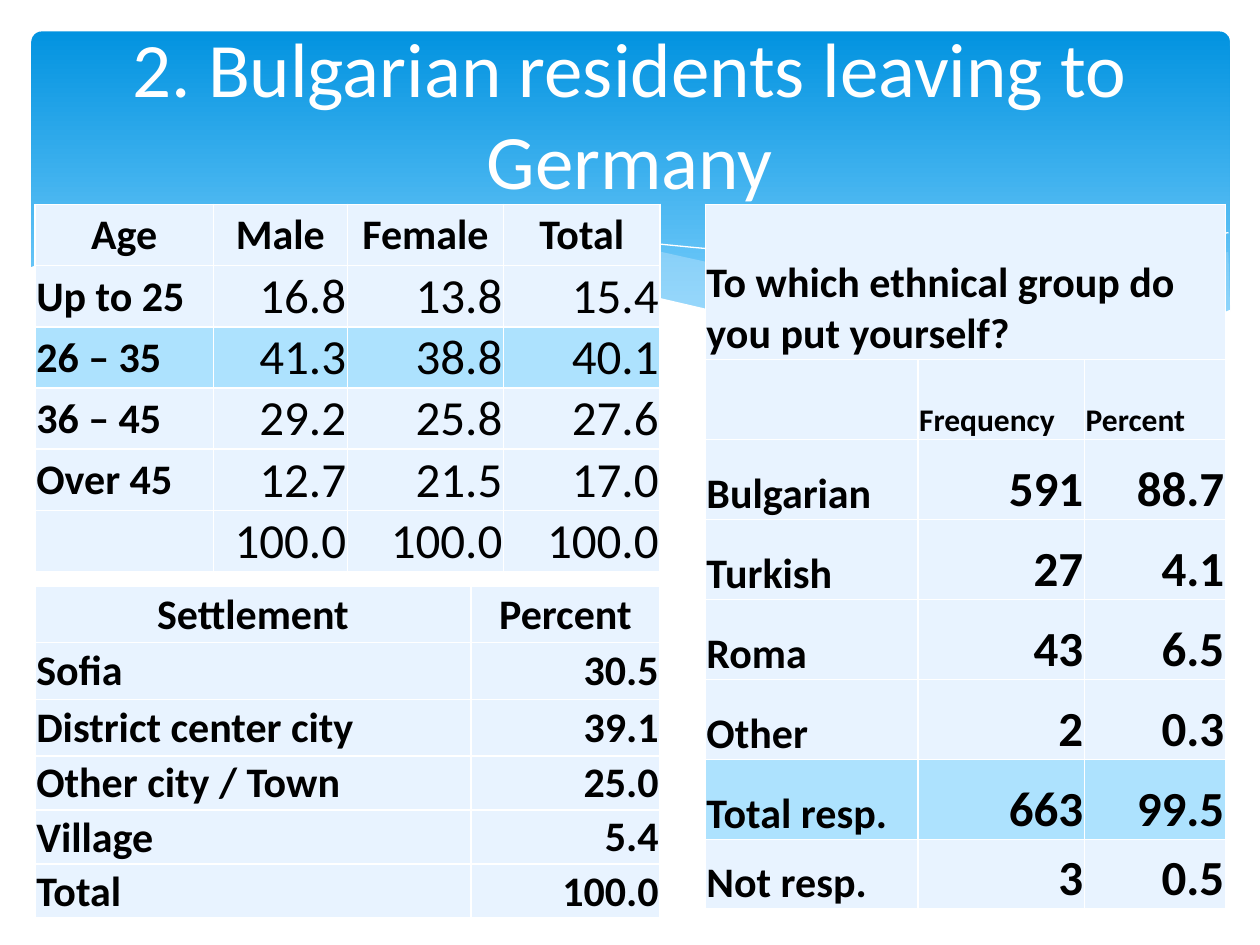
import pptx
import pptx.dml.color
import pptx.enum.shapes
import pptx.enum.text
import pptx.oxml
import pptx.oxml.ns
import pptx.util

Pt = pptx.util.Pt
Align = pptx.enum.text.PP_ALIGN
Anchor = pptx.enum.text.MSO_ANCHOR
WHITE, PALE, BRIGHT = "FFFFFF", "E8F3FF", "ADE2FE"
SPACE = pptx.oxml.ns.nsdecls("a")


def tint(code):
    return pptx.dml.color.RGBColor.from_string(code)


def write(frame, text, size=24, bold=False, color="000000", align=Align.LEFT):
    line = frame.paragraphs[0]
    line.alignment = align
    run = line.add_run()
    run.text = text
    run.font.name = "Calibri"
    run.font.size = Pt(size)
    run.font.bold = bold
    run.font.color.rgb = tint(color)


deck = pptx.Presentation()
deck.slide_width, deck.slide_height = Pt(720), Pt(540)
slide = deck.slides.add_slide(deck.slide_layouts[5])
shapes = slide.shapes

banner = shapes.add_shape(pptx.enum.shapes.MSO_SHAPE.ROUNDED_RECTANGLE,
                          Pt(18), Pt(18), Pt(684.7), Pt(194.4))
banner.shadow.inherit = False
banner.adjustments[0] = 0.03
banner.line.fill.background()
banner.fill.gradient()
banner.fill.gradient_angle = 270
for stop, place, code in zip(banner.fill.gradient_stops, (0, 0.9), ("0293E0", "83D3FE")):
    stop.position = place
    stop.color.rgb = tint(code)

waves = [
    ("C6E7FC", 29, [[(702, 144), (620, 161), (542, 179), (476, 191)],
                    [(476, 191), (554, 199), (628, 197), (703, 178)]]),
    ("C6E7FC", 40, [[(206, 138), (261, 146), (382, 173), (479, 192), (565, 200), (643, 197)],
                    [(643, 197), (558, 183), (453, 160), (361, 141), (287, 134), (206, 138)]]),
    (None, 100, [[(222, 140), (269, 135), (352, 137), (458, 150), (572, 174), (653, 196)]]),
    (None, 100, [[(441, 185), (539, 161), (624, 143), (702, 133)]]),
    (WHITE, 100, [[(703, 177), (647, 194), (571, 199), (467, 189), (322, 158),
                   (210, 137), (116, 132), (55, 140), (17, 153)],
                  [(17, 237), (703, 237)]]),
]
STEPS = 5
for code, cover, edges in waves:
    points = []
    for edge in edges:
        knots = [edge[0], *edge, edge[-1]]
        points.append(edge[0])
        for a, b, c, d in zip(knots, knots[1:], knots[2:], knots[3:]):
            for step in range(1, STEPS + 1):
                t = step / STEPS
                points.append(tuple(
                    b[i] + t * (c[i] - a[i]) / 2
                    + t * t * (2 * a[i] - 5 * b[i] + 4 * c[i] - d[i]) / 2
                    + t ** 3 * (3 * b[i] - a[i] - 3 * c[i] + d[i]) / 2
                    for i in range(2)))
    path = shapes.build_freeform(*points[0], scale=Pt(1))
    path.add_line_segments(points[1:], close=code is not None)
    wave = path.convert_to_shape()
    wave.shadow.inherit = False
    if code:
        wave.fill.solid()
        wave.fill.fore_color.rgb = tint(code)
        wave.line.fill.background()
        paint = wave._element.spPr.find(".//" + pptx.oxml.ns.qn("a:srgbClr"))
        paint.append(pptx.oxml.parse_xml(f'<a:alpha {SPACE} val="{cover * 1000}"/>'))
    else:
        wave.fill.background()
        wave.line.color.rgb = tint(WHITE)
        wave.line.width = Pt(0)

title = shapes.title
title._element.getparent().append(title._element)
title.left, title.top, title.width, title.height = Pt(36), Pt(15), Pt(648), Pt(98.6)
title.text_frame.word_wrap = True
title.text_frame.auto_size = pptx.enum.text.MSO_AUTO_SIZE.NONE
title.text_frame.vertical_anchor = Anchor.MIDDLE
write(title.text_frame, "2. Bulgarian residents leaving to Germany", size=44,
      color=WHITE, align=Align.CENTER)

ages = dict(
    left=20, top=116.8, cols=[102, 76.5, 89.3, 89.3], rows=[35] * 6,
    heads=1, align=Align.CENTER, size=28, bold=False, anchor=Anchor.MIDDLE,
    bright="26 – 35",
    data=[["Age", "Male", "Female", "Total"],
          ["Up to 25", "16.8", "13.8", "15.4"],
          ["26 – 35", "41.3", "38.8", "40.1"],
          ["36 – 45", "29.2", "25.8", "27.6"],
          ["Over 45", "12.7", "21.5", "17.0"],
          ["", "100.0", "100.0", "100.0"]])
groups = dict(
    left=403, top=116.8, cols=[121.5, 95.2, 80.6], rows=[88.8] + [45.7] * 6 + [39.4],
    heads=2, align=Align.LEFT, size=28, bold=True, anchor=Anchor.BOTTOM,
    bright="Total resp.",
    data=[["To which ethnical group do you put yourself?", "", ""],
          ["", "Frequency", "Percent"],
          ["Bulgarian", "591", "88.7"],
          ["Turkish", "27", "4.1"],
          ["Roma", "43", "6.5"],
          ["Other", "2", "0.3"],
          ["Total resp.", "663", "99.5"],
          ["Not resp.", "3", "0.5"]])
homes = dict(
    left=20, top=334.8, cols=[249.1, 108], rows=[32.4] * 3 + [30.9] * 3,
    heads=1, align=Align.CENTER, size=24, bold=True, anchor=Anchor.MIDDLE,
    bright=None,
    data=[["Settlement", "Percent"],
          ["Sofia", "30.5"],
          ["District center city", "39.1"],
          ["Other city / Town", "25.0"],
          ["Village", "5.4"],
          ["Total", "100.0"]])

for part in (ages, groups, homes):
    cols, rows = part["cols"], part["rows"]
    grid = shapes.add_table(len(rows), len(cols), Pt(part["left"]), Pt(part["top"]),
                            Pt(sum(cols)), Pt(sum(rows))).table
    grid.first_row = grid.horz_banding = False
    for col, width in zip(grid.columns, cols):
        col.width = Pt(width)
    for r, texts in enumerate(part["data"]):
        grid.rows[r].height = Pt(rows[r])
        for c, text in enumerate(texts):
            cell = grid.cell(r, c)
            cell.margin_left = cell.margin_right = cell.margin_top = Pt(0.72)
            cell.margin_bottom = 0
            low = text in ("Village", "Total") and r > 0
            cell.vertical_anchor = Anchor.BOTTOM if low else part["anchor"]
            for side in "LRTB":
                cell._tc.get_or_add_tcPr().append(pptx.oxml.parse_xml(
                    f'<a:ln{side} {SPACE} w="{Pt(1)}"><a:solidFill>'
                    f'<a:srgbClr val="{WHITE}"/></a:solidFill></a:ln{side}>'))
            cell.fill.solid()
            cell.fill.fore_color.rgb = tint(BRIGHT if texts[0] == part["bright"] else PALE)
            if not text:
                continue
            if r < part["heads"]:
                write(cell.text_frame, text, size=18 if r else 24, bold=True,
                      align=part["align"])
            elif c == 0:
                write(cell.text_frame, text, bold=True)
            else:
                write(cell.text_frame, text, size=part["size"], bold=part["bold"],
                      align=Align.RIGHT)
    if part is groups:
        grid.cell(0, 0).merge(grid.cell(0, len(cols) - 1))

deck.save("out.pptx")
